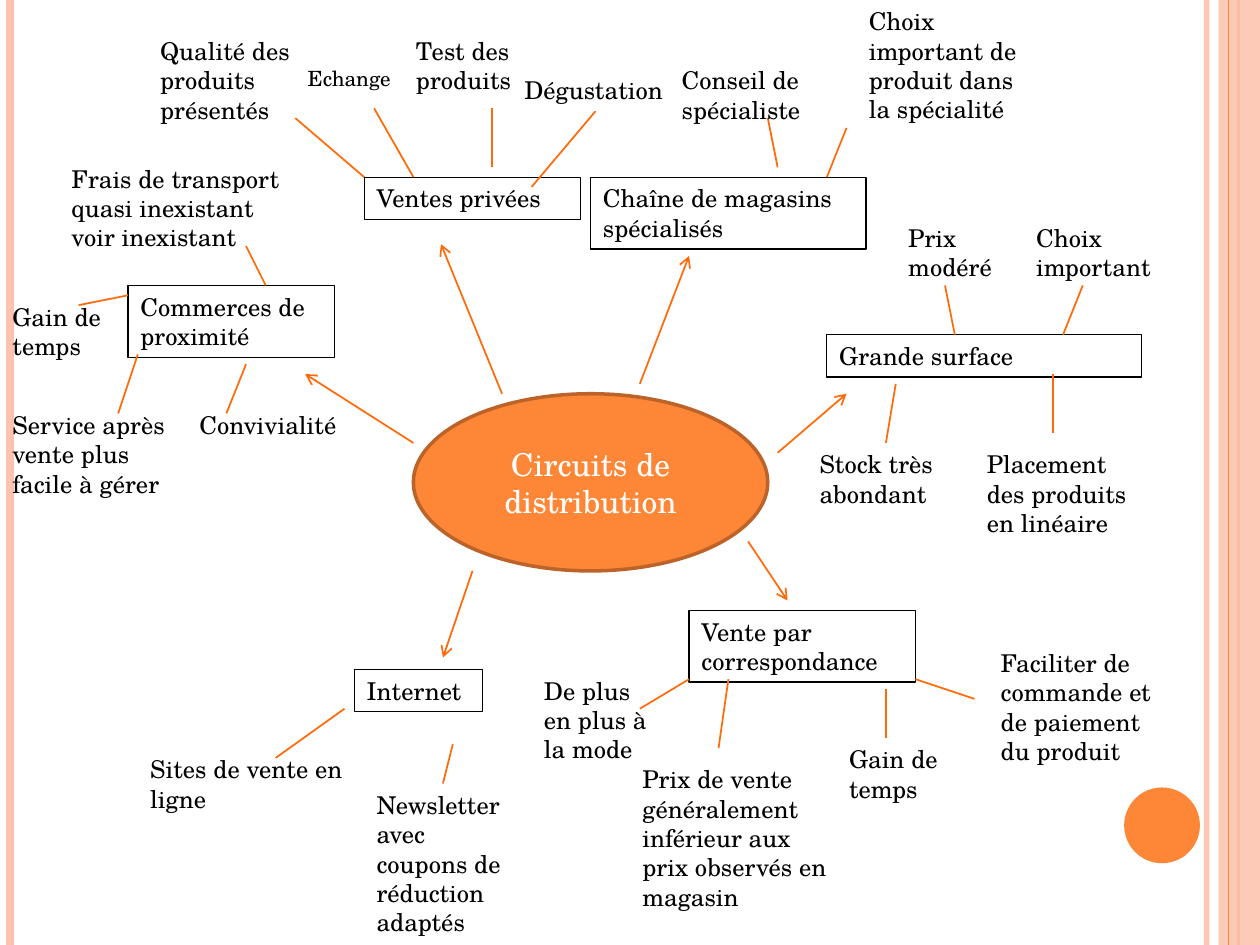
from lxml.etree import SubElement
from pptx import Presentation
from pptx.dml.color import RGBColor
from pptx.enum.shapes import MSO_CONNECTOR as Connector, MSO_SHAPE as Shape
from pptx.enum.text import MSO_ANCHOR as Anchor, MSO_AUTO_SIZE as AutoSize, PP_ALIGN as Align
from pptx.oxml.ns import qn
from pptx.util import Inches, Pt

COLORS = {
    "orange": "FE8637",
    "peach": "FEC3AE",
    "rust": "BC6329",
    "branch": "FF6B0A",
    "ink": "000000",
    "white": "FFFFFF",
}
FONT = "TeX Gyre Schola"
COLUMNS, ROWS = 128, 96
CELL = 10 / COLUMNS

CIRCUITS = [
    {
        "box": ("Internet", 36, 68, 13, 1),
        "arrow": (48, 58, 45, 66.8),
        "reasons": [
            (("Sites de vente en ligne", 14, 76, 23, 2), (35, 72, 28, 77)),
            (("Newsletter avec coupons de réduction adaptés", 37, 79.6, 16, 5), (46, 75.6, 45, 79.6)),
        ],
    },
    {
        "box": ("Grande surface", 84, 34, 32, 1),
        "arrow": (79, 46, 86, 40),
        "reasons": [
            (("Placement des produits en linéaire", 99, 45, 18, 3), (107, 38, 107, 44)),
            (("Choix important", 104, 22, 16, 2), (108, 34, 110, 29)),
            (("Prix modéré", 91, 22, 12, 2), (97, 34, 96, 29)),
            (("Stock très abondant", 82, 45, 16, 2), (91, 39, 90, 45)),
        ],
    },
    {
        "box": ("Ventes privées", 37, 18, 22, 1),
        "arrow": (51, 40, 44.8, 24.8),
        "reasons": [
            (("Qualité des produits présentés", 15, 3, 17, 3), (37, 18, 30, 12)),
            (("Echange", 30, 6, 13, 1, 12), (42, 18, 38, 11)),
            (("Test des produits", 41, 3, 16, 2), (50, 17, 50, 11)),
            (("Dégustation", 52, 7, 17, 1), (54, 19, 60.5, 11.3)),
        ],
    },
    {
        "box": ("Vente par correspondance", 70, 62, 23, 2),
        "arrow": (76, 55, 80, 61),
        "reasons": [
            (("Faciliter de commande et de paiement du produit", 100.4, 65.2, 20, 4), (93, 69, 99, 71)),
            (("Gain de temps", 85, 75, 13, 2), (90, 70, 90, 75)),
            (("Prix de vente généralement inférieur aux prix observés en magasin", 64, 77, 22, 5),
             (74, 69, 73, 76)),
            (("De plus en plus à la mode", 54, 68, 13, 3), (70, 69, 65, 72)),
        ],
    },
    {
        "box": ("Commerces de proximité", 13, 29, 21, 2),
        "arrow": (42, 45, 31, 38),
        "reasons": [
            (("Frais de transport quasi inexistant voir inexistant", 6, 16, 26, 3), (27, 29, 25, 25)),
            (("Gain de temps", 0, 30, 15, 2), (13, 30, 8, 31)),
            (("Service après vente plus facile à gérer", 0, 41, 20, 3), (14, 36, 12, 42)),
            (("Convivialité", 19, 41, 17, 1), (25, 37, 23, 42)),
        ],
    },
    {
        "box": ("Chaîne de magasins spécialisés", 60, 18, 28, 2),
        "arrow": (65, 39, 70, 26),
        "reasons": [
            (("Conseil de spécialiste", 68, 6, 18, 2), (79, 17, 78, 12)),
            (("Choix important de produit dans la spécialité", 87, 0, 20, 4), (84, 18, 86, 13)),
        ],
    },
]


def grid(cells):
    """Turn a number of grid cells into a length."""
    return Inches(cells * CELL)


def rgb(name):
    """Look up a colour by its name."""
    return RGBColor.from_string(COLORS[name])


def fade(element, percent):
    """Set the opacity of the solid colour inside an element."""
    color = next(element.iter(qn("a:srgbClr")))
    SubElement(color, qn("a:alpha"), val=str(percent * 1000))


def write(frame, words, size, color, align=Align.LEFT):
    """Write one paragraph of wrapped text."""
    frame.word_wrap = True
    paragraph = frame.paragraphs[0]
    paragraph.alignment = align
    run = paragraph.add_run()
    run.text = words
    run.font.size = Pt(size)
    run.font.name = FONT
    run.font.color.rgb = rgb(color)


def add_line(slide, ends, color="branch", width=1, arrow=False, opacity=100):
    """Draw a straight line between two grid points."""
    line = slide.shapes.add_connector(Connector.STRAIGHT, *map(grid, ends))
    line.line.color.rgb = rgb(color)
    line.line.width = Pt(width)
    properties = line._element.spPr
    if opacity < 100:
        fade(properties, opacity)
    if arrow:
        SubElement(line.line._get_or_add_ln(), qn("a:tailEnd"), type="arrow")
    SubElement(properties, qn("a:effectLst"))


def add_label(slide, words, left, top, width, rows, size=14, framed=False):
    """Add a text box as high as its rows of text, framed on request."""
    height = Inches(0.1 + rows * size * 0.0168)
    label = slide.shapes.add_textbox(grid(left), grid(top), grid(width), height)
    write(label.text_frame, words, size, "ink")
    label.text_frame.auto_size = AutoSize.SHAPE_TO_FIT_TEXT
    if framed:
        label.line.color.rgb = rgb("ink")
        label.line.width = Pt(0.75)


def add_solid(slide, kind, area, color):
    """Add a flat shape without an outline."""
    solid = slide.shapes.add_shape(kind, *map(grid, area))
    solid.shadow.inherit = False
    solid.fill.solid()
    solid.fill.fore_color.rgb = rgb(color)
    solid.line.fill.background()
    return solid


def add_stripe(slide, column, color, width, opacity=100):
    """Draw a vertical line over the full height."""
    add_line(slide, (column, 0, column, ROWS), color, width, opacity=opacity)


def add_decor(slide):
    """Draw the side stripes and the corner disc."""
    add_stripe(slide, 122.6, "peach", 3, 93)
    add_stripe(slide, 1, "peach", 4.5)
    add_stripe(slide, 125.8, "orange", 1.5)
    band = add_solid(slide, Shape.RECTANGLE, (123.8, 0, 4.2, ROWS), "peach")
    fade(band._element.spPr, 87)
    add_stripe(slide, 124.8, "orange", 0.75)
    add_solid(slide, Shape.OVAL, (114.2, 80, 7.7, 7.7), "orange")


def add_hub(slide):
    """Draw the central subject."""
    hub = add_solid(slide, Shape.OVAL, (42, 40, 36, 18), "orange")
    hub.line.color.rgb = rgb("rust")
    hub.line.width = Pt(2)
    hub.text_frame.vertical_anchor = Anchor.MIDDLE
    write(hub.text_frame, "Circuits de distribution", 18, "white", Align.CENTER)


def add_circuit(slide, circuit):
    """Draw one circuit with its arrow and its reasons."""
    add_label(slide, *circuit["box"], framed=True)
    add_line(slide, circuit["arrow"], arrow=True)
    for reason, link in circuit["reasons"]:
        add_line(slide, link)
        add_label(slide, *reason)


def main():
    """Build the mind map and save it."""
    deck = Presentation()
    deck.slide_width, deck.slide_height = grid(COLUMNS), grid(ROWS)
    slide = deck.slides.add_slide(deck.slide_layouts[6])
    add_decor(slide)
    add_hub(slide)
    for circuit in CIRCUITS:
        add_circuit(slide, circuit)
    deck.save("out.pptx")


if __name__ == "__main__":
    main()
